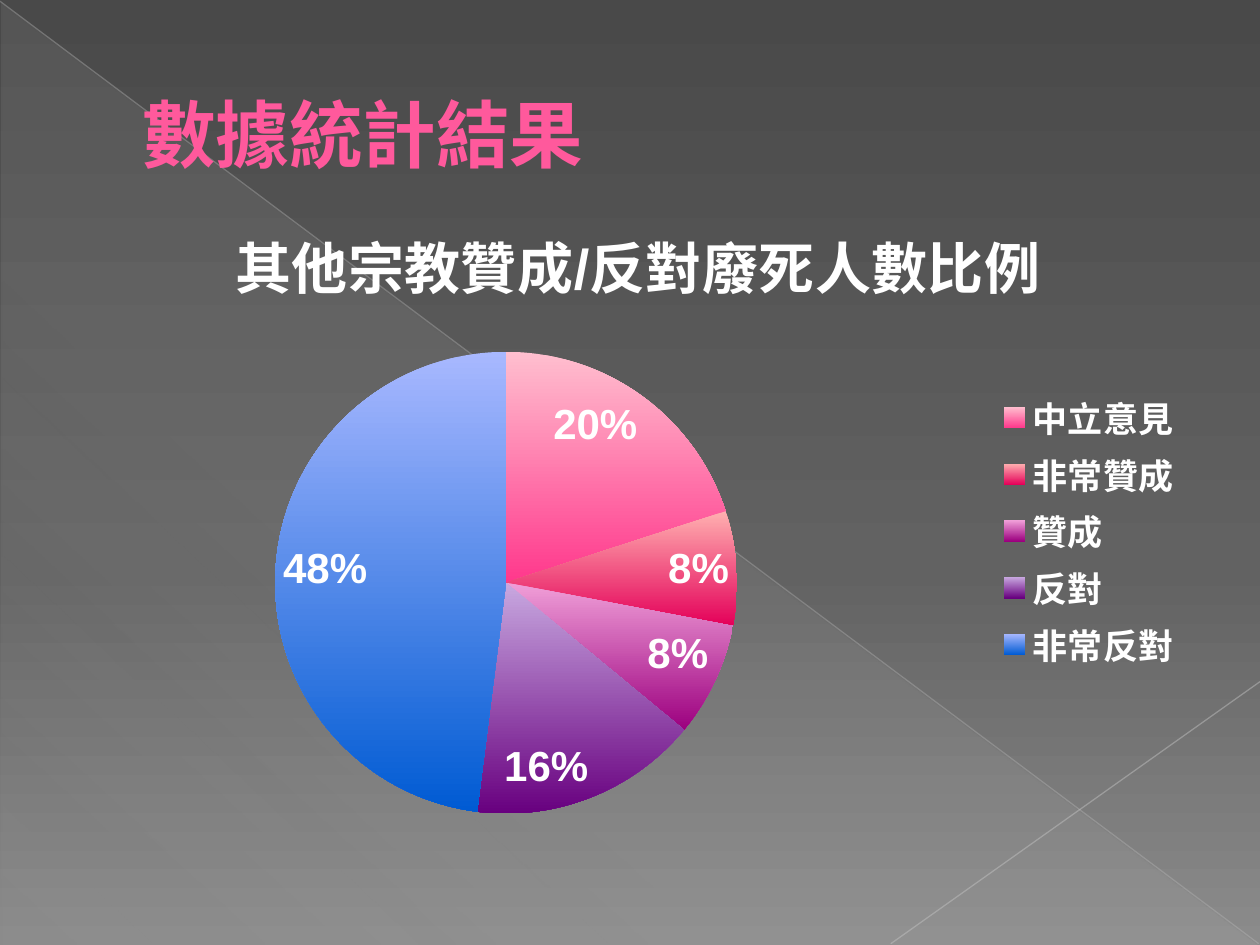
from lxml import etree
from pptx import Presentation
from pptx.chart.data import CategoryChartData
from pptx.dml.color import RGBColor
from pptx.enum import chart as charts, shapes, text
from pptx.oxml import parse_xml
from pptx.oxml.ns import nsdecls, qn
from pptx.util import Inches, Pt

COLORS = {
    "title": "FF599C", "white": "FFFFFF", "veil": "D2D2D2",
    "long_line": "BEBEBE", "short_line": "C5C5C5",
    "top": "494949", "middle": "626262", "bottom": "8B8B8B",
}
SLICES = [
    ("中立意見", 20, "FFBFCF", "FF388C"),
    ("非常贊成", 8, "FFB0B0", "E40059"),
    ("贊成", 8, "F09FD8", "9C007F"),
    ("反對", 16, "C8A8E0", "68007F"),
    ("非常反對", 48, "A8B8FF", "005BD3"),
]


def use_gradient(solid, stops, angle):
    marks = "".join(
        f'<a:gs pos="{place * 1000}"><a:srgbClr val="{color}">'
        f'<a:alpha val="{alpha * 1000}"/></a:srgbClr></a:gs>'
        for place, color, alpha in stops)
    solid.getparent().replace(solid, parse_xml(
        f'<a:gradFill {nsdecls("a")} rotWithShape="1"><a:gsLst>{marks}</a:gsLst>'
        f'<a:lin ang="{angle * 60000}" scaled="0"/></a:gradFill>'))


def place_manually(owner, after, x, y, width, height, inner=False):
    for old in owner.findall(qn("c:layout")):
        owner.remove(old)
    target = '<c:layoutTarget val="inner"/>' if inner else ""
    layout = parse_xml(
        f'<c:layout {nsdecls("c")}><c:manualLayout>{target}'
        f'<c:xMode val="edge"/><c:yMode val="edge"/><c:x val="{x}"/><c:y val="{y}"/>'
        f'<c:w val="{width}"/><c:h val="{height}"/></c:manualLayout></c:layout>')
    if after is None:
        owner.insert(0, layout)
    else:
        owner.find(qn(after)).addnext(layout)


deck = Presentation()
deck.slide_width, deck.slide_height = Inches(10), Inches(7.5)
page = deck.slides.add_slide(deck.slide_layouts[6])
page.background.fill.solid()
use_gradient(page.element.xpath(".//p:bgPr/a:solidFill")[0],
             [(0, COLORS["top"], 100), (60, COLORS["middle"], 100),
              (100, COLORS["bottom"], 100)], 90)

veil = page.shapes.add_shape(shapes.MSO_SHAPE.RIGHT_TRIANGLE, Inches(0.01),
                             Inches(0.02), Inches(9.98), Inches(7.48))
veil.shadow.inherit = False
veil.line.fill.background()
veil.fill.solid()
use_gradient(veil.element.spPr.find(qn("a:solidFill")),
             [(0, COLORS["veil"], 10), (70, COLORS["veil"], 8),
              (100, COLORS["veil"], 1)], 133)

for x1, y1, x2, y2, color, alpha in [
        (0, 0.01, 9.99, 7.49, "long_line", 35),
        (10, 5.41, 7.07, 7.49, "short_line", 45)]:
    line = page.shapes.add_connector(shapes.MSO_CONNECTOR.STRAIGHT, Inches(x1),
                                     Inches(y1), Inches(x2), Inches(y2))
    line.line.width = Pt(0.75)
    line.line.color.rgb = RGBColor.from_string(COLORS[color])
    tint = line.element.spPr.find(".//" + qn("a:srgbClr"))
    etree.SubElement(tint, qn("a:alpha")).set("val", str(alpha * 1000))
    etree.SubElement(line.element.spPr, qn("a:effectLst"))

box = page.shapes.add_textbox(Inches(0.5), Inches(0.29), Inches(9), Inches(1.53))
frame = box.text_frame
frame.word_wrap = True
frame.vertical_anchor = text.MSO_ANCHOR.MIDDLE
frame.margin_left = frame.margin_right = Inches(0.1)
frame.margin_top = frame.margin_bottom = Inches(0.1)
para = frame.paragraphs[0]
para._p.get_or_add_pPr().set("marL", str(Inches(0.53)))
span = para.add_run()
span.text = "數據統計結果"
span.font.name = "TeX Gyre Adventor"
span.font.size = Pt(42)
span.font.bold = True
span.font.color.rgb = RGBColor.from_string(COLORS["title"])

data = CategoryChartData()
data.categories = [name for name, *_ in SLICES]
data.add_series("Series 1", [value for _, value, *_ in SLICES])
chart = page.shapes.add_chart(charts.XL_CHART_TYPE.PIE, Inches(0.7), Inches(1.48),
                              Inches(8.73), Inches(5.47), data).chart
chart.font.name = "Arial"
chart.font.size = Pt(10)
chart.has_title = True
para = chart.chart_title.text_frame.paragraphs[0]
span = para.add_run()
span.text = "其他宗教贊成/反對廢死人數比例"

chart.has_legend = True
chart.legend.position = charts.XL_LEGEND_POSITION.RIGHT
chart.legend.include_in_layout = False
plot = chart.plots[0]
plot.vary_by_categories = True
plot.has_data_labels = True
labels = plot.data_labels
labels.show_percentage = True
labels.show_value = False
labels.number_format = "0%"
labels.number_format_is_linked = False
labels.position = charts.XL_LABEL_POSITION.INSIDE_END

for font, size in [(span.font, 32), (chart.legend.font, 20), (labels.font, 24)]:
    font.name = "Arial"
    font.size = Pt(size)
    font.bold = True
    font.color.rgb = RGBColor.from_string(COLORS["white"])

for index, (_, _, light, deep) in enumerate(SLICES):
    point = plot.series[0].points[index]
    point.format.line.fill.background()
    point.format.fill.solid()
    point.format.fill.fore_color.rgb = RGBColor.from_string(deep)
    solid = chart.element.xpath(".//c:dPt/c:spPr/a:solidFill")[0]
    use_gradient(solid, [(0, light, 100), (100, deep, 100)], 90)

place_manually(chart.element.find(".//" + qn("c:plotArea")), None,
               0.17, 0.24, 0.42, 0.67, inner=True)
place_manually(chart.element.find(".//" + qn("c:legend")), "c:legendPos",
               0.82, 0.29, 0.18, 0.42)

deck.save("out.pptx")
